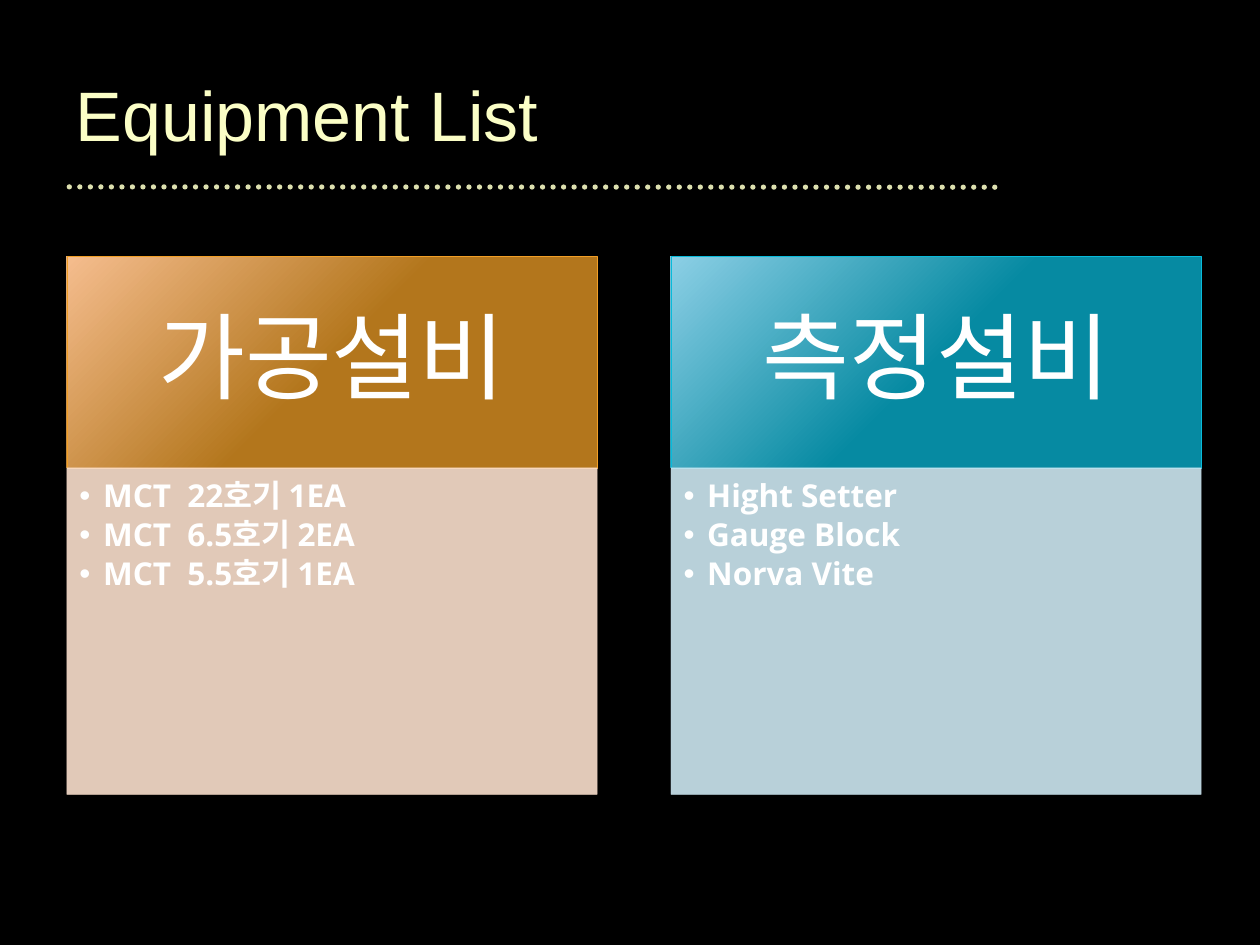
"""Build the Equipment List slide with two headed columns of equipment."""
from dataclasses import dataclass

from pptx import Presentation
from pptx.dml.color import RGBColor
from pptx.dml.fill import FillFormat
from pptx.enum.dml import MSO_LINE
from pptx.enum.shapes import MSO_CONNECTOR
from pptx.enum.text import MSO_ANCHOR as Anchor, MSO_AUTO_SIZE as AutoSize, PP_ALIGN as Align
from pptx.oxml.ns import qn
from pptx.shapes.placeholder import SlidePlaceholder
from pptx.slide import Slide
from pptx.util import Pt
from lxml.etree import SubElement

COLORS = {
    "background": "000000",
    "title": "FBFEC6",
    "rule": "DDE0AF",
    "text": "FFFFFF",
    "orange": "B3761C",
    "orange_light": "F5BD8E",
    "orange_line": "F29F26",
    "orange_pale": "FADFCD",
    "blue": "068AA2",
    "blue_light": "8CCFE5",
    "blue_line": "08BBDB",
    "blue_pale": "CCE7F1",
}
COMPARISON_LAYOUT = 4
COLUMN_LEFT, COLUMN_STEP, COLUMN_WIDTH = 38.2, 345.2, 303
HEADER_TOP, HEADER_HEIGHT, BODY_HEIGHT = 146.4, 121, 186.6


@dataclass
class Box:
    left: float
    top: float
    width: float
    height: float


@dataclass
class TextStyle:
    size: float
    color: str
    font: str = "Open Sans"
    bold: bool = False
    align: Align = Align.LEFT
    anchor: Anchor = Anchor.MIDDLE
    margins: tuple[float, float, float, float] = (7.2, 3.6, 7.2, 3.6)
    line_spacing: float = 0.9
    space_after: float = 0
    indent: float = 0


@dataclass
class Column:
    heading: str
    items: list[str]
    hue: str


TITLE_STYLE = TextStyle(40, "title", font="Arial", line_spacing=1)
HEADING_STYLE = TextStyle(54, "text", align=Align.CENTER, margins=(30, 17, 30, 17))
LIST_STYLE = TextStyle(18, "text", bold=True, anchor=Anchor.TOP, margins=(7.2, 7.2, 10, 11.5),
                       space_after=2.7, indent=13.5)
COLUMNS = [
    Column("가공설비", ["MCT  22호기 1EA", "MCT  6.5호기 2EA", "MCT  5.5호기 1EA"], "orange"),
    Column("측정설비", ["Hight Setter", "Gauge Block", "Norva Vite"], "blue"),
]


def color(name: str) -> RGBColor:
    return RGBColor.from_string(COLORS[name])


def fill_solid(fill: FillFormat, name: str) -> None:
    fill.solid()
    fill.fore_color.rgb = color(name)


def place_text(shape: SlidePlaceholder, box: Box, lines: list[str], style: TextStyle) -> None:
    shape.left, shape.top = Pt(box.left), Pt(box.top)
    shape.width, shape.height = Pt(box.width), Pt(box.height)
    frame = shape.text_frame
    frame.text = "\n".join(lines)
    frame.word_wrap, frame.auto_size = True, AutoSize.NONE
    frame.vertical_anchor = style.anchor
    frame.margin_left, frame.margin_top, frame.margin_right, frame.margin_bottom = map(Pt, style.margins)
    for paragraph in frame.paragraphs:
        paragraph.alignment = style.align
        paragraph.line_spacing = style.line_spacing
        paragraph.space_before, paragraph.space_after = Pt(0), Pt(style.space_after)
        properties = paragraph._p.get_or_add_pPr()
        properties.set("marL", str(Pt(style.indent)))
        properties.set("indent", str(-Pt(style.indent)))
        for run in paragraph.runs:
            font = run.font
            font.name, font.size, font.bold = style.font, Pt(style.size), style.bold
            font.color.rgb = color(style.color)


def fill_header(shape: SlidePlaceholder, hue: str) -> None:
    shape.fill.gradient()
    shape.fill.gradient_angle = 135
    stops = zip(shape.fill.gradient_stops, (0.5, 1), (hue, f"{hue}_light"))
    for stop, position, name in stops:
        stop.position = position
        stop.color.rgb = color(name)
    fill_solid(shape.line.fill, f"{hue}_line")
    shape.line.width = Pt(0.25)


def fill_body(shape: SlidePlaceholder, hue: str) -> None:
    fill_solid(shape.fill, f"{hue}_pale")
    fill_solid(shape.line.fill, f"{hue}_pale")
    shape.line.width = Pt(0.25)
    for element in shape._element.spPr.iter(qn("a:srgbClr")):
        SubElement(element, qn("a:alpha"), val="90000")


def draw_column(header: SlidePlaceholder, body: SlidePlaceholder, left: float, column: Column) -> None:
    header_box = Box(left, HEADER_TOP, COLUMN_WIDTH, HEADER_HEIGHT)
    body_box = Box(left, HEADER_TOP + HEADER_HEIGHT, COLUMN_WIDTH, BODY_HEIGHT)
    place_text(header, header_box, [column.heading], HEADING_STYLE)
    fill_header(header, column.hue)
    place_text(body, body_box, column.items, LIST_STYLE)
    fill_body(body, column.hue)


def draw_rule(slide: Slide) -> None:
    rule = slide.shapes.add_connector(MSO_CONNECTOR.STRAIGHT, Pt(39.6), Pt(106.8), Pt(573.8), Pt(107))
    rule.line.width = Pt(3)
    fill_solid(rule.line.fill, "rule")
    rule.line.dash_style = MSO_LINE.ROUND_DOT
    rule.line._ln.set("cap", "rnd")
    SubElement(rule._element.spPr, qn("a:effectLst"))


def main() -> None:
    presentation = Presentation()
    presentation.slide_width, presentation.slide_height = Pt(720), Pt(540)
    slide = presentation.slides.add_slide(presentation.slide_layouts[COMPARISON_LAYOUT])
    fill_solid(slide.background.fill, "background")
    draw_rule(slide)
    place_text(slide.shapes.title, Box(36, 28, 538, 73.5), ["Equipment List"], TITLE_STYLE)
    _, *panels = slide.placeholders
    for index, column in enumerate(COLUMNS):
        header, body = panels[2 * index:2 * index + 2]
        draw_column(header, body, COLUMN_LEFT + index * COLUMN_STEP, column)
    presentation.save("out.pptx")


if __name__ == "__main__":
    main()
